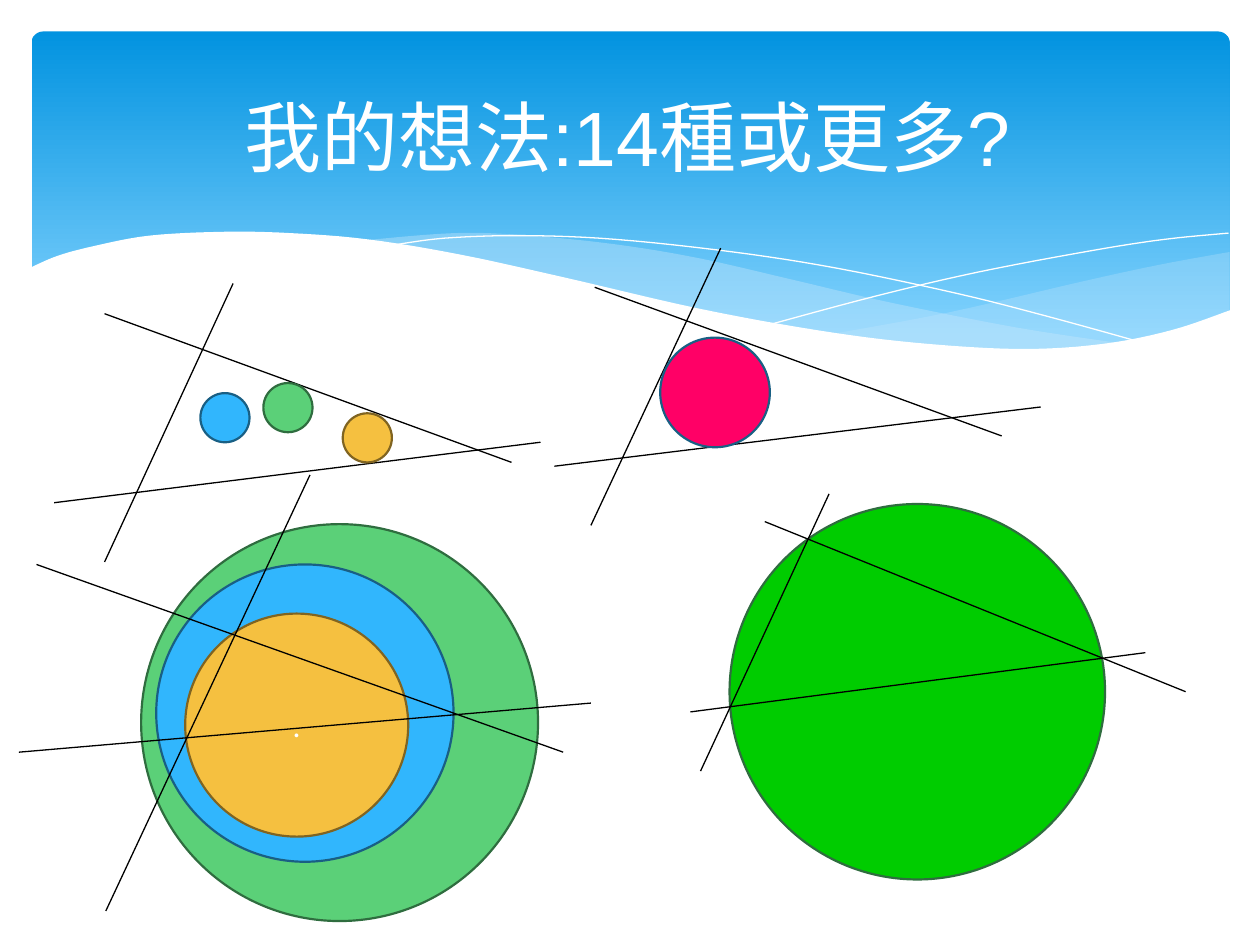
from lxml import etree
from pptx import Presentation
from pptx.dml.color import RGBColor
from pptx.enum.shapes import MSO_CONNECTOR, MSO_SHAPE
from pptx.enum.text import MSO_ANCHOR, PP_ALIGN
from pptx.oxml.ns import qn
from pptx.util import Inches, Pt

ROUNDED, OVAL = MSO_SHAPE.ROUNDED_RECTANGLE, MSO_SHAPE.OVAL
STRAIGHT = MSO_CONNECTOR.STRAIGHT
MIDDLE, CENTER = MSO_ANCHOR.MIDDLE, PP_ALIGN.CENTER
CURVE_STEPS = 6

# Circle styles: fill and outline
GREEN = ("5BD078", "2F6D3F")
BLUE = ("31B6FD", "195F84")
ORANGE = ("F5C040", "806421")
PINK = ("FF0066", "195F84")
BRIGHT_GREEN = ("00CC00", "2F6D3F")

# Each diagram: circles (left, top, diameter, style), lines (from, to),
# and whether the lines lie over the circles
DIAGRAMS = [
    ([(5.79, 4, 2.98, BRIGHT_GREEN)],
     [((6.07, 4.14), (9.41, 5.49)), ((5.48, 5.65), (9.09, 5.18)),
      ((5.56, 6.12), (6.58, 3.92))], True),
    ([(1.12, 4.16, 3.15, GREEN), (1.24, 4.48, 2.36, BLUE),
      (1.47, 4.87, 1.77, ORANGE, ".")],
     [((0.29, 4.48), (4.47, 5.97)), ((0.15, 5.97), (4.69, 5.58)),
      ((0.84, 7.23), (2.46, 3.77))], True),
    ([(2.72, 3.28, 0.39, ORANGE), (2.09, 3.04, 0.39, GREEN),
      (1.59, 3.12, 0.39, BLUE)],
     [((0.83, 2.49), (4.06, 3.67)), ((0.83, 4.46), (1.85, 2.25)),
      ((0.43, 3.99), (4.29, 3.51))], False),
    ([(5.24, 2.68, 0.87, PINK)],
     [((4.69, 4.17), (5.72, 1.97)), ((4.4, 3.7), (8.26, 3.23)),
      ((4.72, 2.28), (7.95, 3.46))], False),
]

# Key points of the banner's waves
RIGHT_TOP = [(9.76, 2), (9.21, 2.1), (8.61, 2.23), (7.53, 2.48), (6.61, 2.65)]
RIGHT_BOTTOM = [(6.61, 2.65), (7.19, 2.72), (7.69, 2.77), (8.14, 2.78),
                (8.72, 2.74), (9.21, 2.65), (9.76, 2.47)]
MIDDLE_TOP = [(8.93, 2.73), (8.07, 2.6), (7.06, 2.4), (6.29, 2.22),
              (5.55, 2.05), (4.89, 1.94), (4.2, 1.87), (3.61, 1.85),
              (2.86, 1.91)]
MIDDLE_BOTTOM = [(2.86, 1.91), (3.62, 2.03), (4.49, 2.22), (5.3, 2.4),
                 (6.18, 2.58), (6.95, 2.7), (7.61, 2.77), (8.18, 2.78),
                 (8.93, 2.73)]
FALLING_LINE = [(3.09, 1.95), (3.53, 1.89), (4.16, 1.87), (4.89, 1.9),
                (5.82, 2), (6.65, 2.13), (7.6, 2.33), (8.31, 2.51),
                (9.07, 2.72)]
RISING_LINE = [(6.13, 2.57), (6.95, 2.35), (7.76, 2.16), (8.66, 1.99),
               (9.24, 1.9), (9.75, 1.85)]
PAGE_EDGE = [(9.77, 2.46), (9.3, 2.62), (8.75, 2.73), (8.09, 2.77),
             (7.26, 2.72), (6.48, 2.62), (5.55, 2.45), (4.47, 2.2),
             (3.65, 2.02), (2.92, 1.9), (2.3, 1.85), (1.77, 1.84),
             (1.19, 1.87), (0.76, 1.95), (0.46, 2.03), (0.23, 2.13)]
PAGE_CORNERS = [(0.23, 3.29), (9.77, 3.29)]


def color(value):
    return RGBColor.from_string(value)


def write(shape, text, size, font, fill="FFFFFF"):
    frame = shape.text_frame
    frame.word_wrap = True
    frame.vertical_anchor = MIDDLE
    paragraph = frame.paragraphs[0]
    paragraph.alignment = CENTER
    run = paragraph.add_run()
    run.text = text
    run.font.size, run.font.name = Pt(size), font
    run.font.color.rgb = color(fill)


def paint(shape, fill=None, line=None, width=0.0, opacity=100):
    shape.shadow.inherit = False
    if fill:
        shape.fill.solid()
        shape.fill.fore_color.rgb = color(fill)
        if opacity < 100:
            solid = shape.fill.fore_color._xFill[0]
            etree.SubElement(solid, qn("a:alpha"), val=str(opacity * 1000))
    else:
        shape.fill.background()
    if line:
        shape.line.color.rgb = color(line)
        shape.line.width = Pt(width)
    else:
        shape.line.fill.background()


def smooth(points):
    """Catmull-Rom curve through the key points."""
    padded = [points[0], *points, points[-1]]
    curve = [points[0]]
    for a, b, c, d in zip(padded, padded[1:], padded[2:], padded[3:]):
        for step in range(1, CURVE_STEPS + 1):
            t = step / CURVE_STEPS
            curve.append(tuple(
                q + t / 2 * (r - p + t * (2 * p - 5 * q + 4 * r - s
                                          + t * (3 * (q - r) + s - p)))
                for p, q, r, s in zip(a, b, c, d)))
    return curve


def add_wave(slide, points, closed=True, **style):
    outline = [(Inches(x), Inches(y)) for x, y in points]
    builder = slide.shapes.build_freeform(*outline[0])
    builder.add_line_segments(outline[1:], close=closed)
    paint(builder.convert_to_shape(), **style)


def add_banner(slide):
    panel = slide.shapes.add_shape(
        ROUNDED, Inches(0.25), Inches(0.25), Inches(9.51), Inches(2.7))
    panel.adjustments[0] = 0.034
    paint(panel)
    panel.fill.gradient()
    panel.fill.gradient_angle = 270
    stops = panel.fill.gradient_stops
    for stop, position, value in zip(stops, (0, 0.9), ("0293E0", "83D3FE")):
        stop.position, stop.color.rgb = position, color(value)

    add_wave(slide, smooth(RIGHT_TOP) + smooth(RIGHT_BOTTOM),
             fill="C6E7FC", opacity=29)
    add_wave(slide, smooth(MIDDLE_TOP) + smooth(MIDDLE_BOTTOM),
             fill="C6E7FC", opacity=40)
    for points in (FALLING_LINE, RISING_LINE):
        add_wave(slide, smooth(points), closed=False, line="FFFFFF")
    add_wave(slide, smooth(PAGE_EDGE) + PAGE_CORNERS, fill="FFFFFF")


def add_title(slide, text):
    title = slide.shapes.title
    title.left, title.top = Inches(0.48), Inches(0.39)
    title.width, title.height = Inches(9), Inches(1.37)
    write(title, text, size=44, font="Arial")
    slide.shapes.element.append(title.element)  # bring in front of the banner


def add_circle(slide, left, top, diameter, style, text=""):
    circle = slide.shapes.add_shape(
        OVAL, Inches(left), Inches(top), Inches(diameter), Inches(diameter))
    fill, line = style
    paint(circle, fill=fill, line=line, width=1.25)
    if text:
        write(circle, text, size=18, font="Calibri")


def add_line(slide, start, end):
    line = slide.shapes.add_connector(
        STRAIGHT, *(Inches(value) for value in start + end))
    line.line.color.rgb = color("000000")
    line.line.width = Pt(0.75)
    etree.SubElement(line.element.spPr, qn("a:effectLst"))


def add_diagram(slide, circles, lines, lines_on_top):
    layers = [(add_circle, circles), (add_line, lines)]
    for draw, items in layers if lines_on_top else reversed(layers):
        for item in items:
            draw(slide, *item)


def main():
    presentation = Presentation()
    presentation.slide_width, presentation.slide_height = Inches(10), Inches(7.5)
    slide = presentation.slides.add_slide(presentation.slide_layouts[5])
    add_banner(slide)
    add_title(slide, "我的想法:14種或更多?")
    for diagram in DIAGRAMS:
        add_diagram(slide, *diagram)
    presentation.save("out.pptx")


if __name__ == "__main__":
    main()
